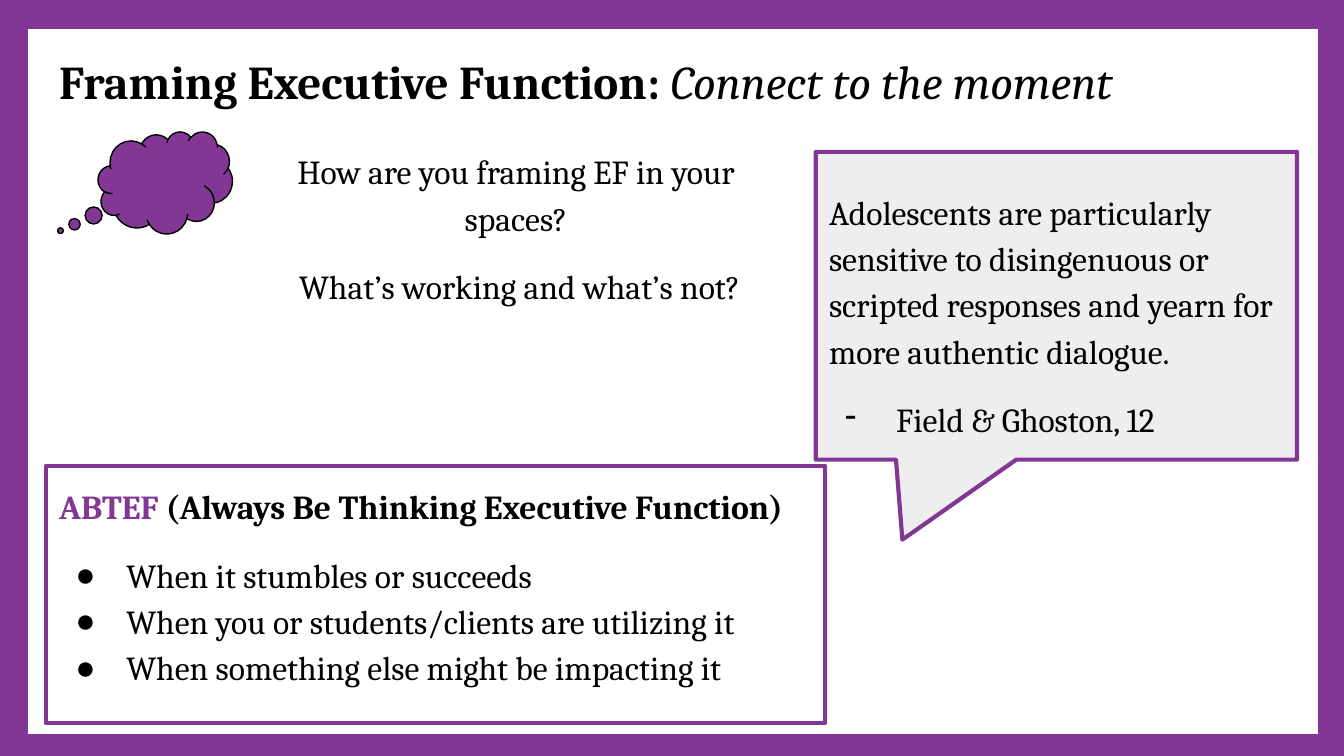
"""Build a slide on framing executive function with a quote and a checklist."""
from lxml import etree
from pptx import Presentation
from pptx.dml import color
from pptx.enum import shapes, text
from pptx.oxml import ns
from pptx.util import Inches, Pt

COLORS = {"purple": "833795", "black": "000000", "gray": "EEEEEE"}
LEFT, CENTER = text.PP_ALIGN.LEFT, text.PP_ALIGN.CENTER


def add_paragraph(frame, runs, size=18, align=LEFT, bullet=None, before=0, spacing=1.15):
    """Write one paragraph of (wording, color, bold, italic) runs."""
    first = not frame.paragraphs[0].runs
    paragraph = frame.paragraphs[0] if first else frame.add_paragraph()
    paragraph.alignment = align
    paragraph.line_spacing = spacing
    paragraph.space_before, paragraph.space_after = Pt(before), Pt(0)
    properties = paragraph._p.get_or_add_pPr()
    properties.set("marL", str(Inches(0.5 if bullet else 0)))
    properties.set("indent", str(Inches(-0.38 if bullet else 0)))
    if bullet:
        bullet_color = etree.SubElement(properties, ns.qn("a:buClr"))
        etree.SubElement(bullet_color, ns.qn("a:srgbClr"), val=COLORS["black"])
        etree.SubElement(properties, ns.qn("a:buChar"), char=bullet)
    else:
        etree.SubElement(properties, ns.qn("a:buNone"))
    paragraph.font.name, paragraph.font.size = "Cambria", Pt(size)
    paragraph.font.color.rgb = color.RGBColor.from_string(COLORS["black"])
    for wording, run_color, bold, italic in runs:
        run = paragraph.add_run()
        run.text = wording
        if run_color != "black":
            run.font.color.rgb = color.RGBColor.from_string(COLORS[run_color])
        if bold:
            run.font.bold = True
        if italic:
            run.font.italic = True


def format_shape(shape, box=None, fill=None, line=None, width=2.25, anchor=text.MSO_ANCHOR.TOP, bottom=0.1):
    """Place a shape and set its fill, outline and text frame."""
    if box:
        shape.left, shape.top, shape.width, shape.height = map(Inches, box)
    if fill:
        shape.fill.solid()
        shape.fill.fore_color.rgb = color.RGBColor.from_string(COLORS[fill])
    else:
        shape.fill.background()
    if line:
        shape.line.color.rgb = color.RGBColor.from_string(COLORS[line])
        shape.line.width = Pt(width)
    shape.shadow.inherit = False
    frame = shape.text_frame
    frame.word_wrap, frame.auto_size = True, text.MSO_AUTO_SIZE.NONE
    frame.vertical_anchor = anchor
    frame.margin_left = frame.margin_top = frame.margin_right = Inches(0.1)
    frame.margin_bottom = Inches(bottom)
    return frame


presentation = Presentation()
presentation.slide_width = Inches(10)
presentation.slide_height = Inches(10) * 9 // 16
slide = presentation.slides.add_slide(presentation.slide_layouts[1])

title = format_shape(slide.shapes.title, (0.34, 0.29, 9.32, 0.63))
add_paragraph(title, [("Framing Executive Function: ", "black", True, False),
                      ("Connect to the moment", "black", False, True)], size=25.2, spacing=1.0)

checklist = format_shape(slide.placeholders[1], (0.34, 3.47, 5.8, 1.91), line="purple")
add_paragraph(checklist, [("ABTEF ", "purple", True, False),
                          ("(Always Be Thinking Executive Function)", "black", True, False)])
moments = ["When it stumbles or succeeds",
           "When you or students/clients are utilizing it",
           "When something else might be impacting it"]
for index, moment in enumerate(moments):
    add_paragraph(checklist, [(moment, "black", False, False)], bullet="●", before=0 if index else 12)

border = slide.shapes.add_shape(shapes.MSO_SHAPE.RECTANGLE, *map(Inches, (0.08, 0.09, 9.85, 5.5)))
format_shape(border, line="purple", width=18)

cloud = slide.shapes.add_shape(shapes.MSO_SHAPE.CLOUD_CALLOUT, *map(Inches, (0.73, 0.98, 1, 0.76)))
cloud.adjustments[0], cloud.adjustments[1] = -0.78, 0.47
format_shape(cloud, fill="purple", line="black", width=0.75)

callout = slide.shapes.add_shape(shapes.MSO_SHAPE.RECTANGULAR_CALLOUT, *map(Inches, (6.07, 1.13, 3.58, 2.29)))
callout.adjustments[0], callout.adjustments[1] = -0.32, 0.76
quote = format_shape(callout, fill="gray", line="purple", anchor=text.MSO_ANCHOR.MIDDLE, bottom=0)
add_paragraph(quote, [("Adolescents are particularly sensitive to disingenuous or scripted responses "
                       "and yearn for more authentic dialogue.", "black", False, False)])
add_paragraph(quote, [("Field & Ghoston, 12", "black", False, False)], bullet="-", before=12)

question_box = slide.shapes.add_textbox(*map(Inches, (1.73, 0.98, 4.22, 1.42)))
questions = format_shape(question_box)
add_paragraph(questions, [("How are you framing EF in your spaces?", "black", False, False)], align=CENTER)
add_paragraph(questions, [(" What’s working and what’s not?", "black", False, False)], align=CENTER, before=12)

presentation.save("out.pptx")
